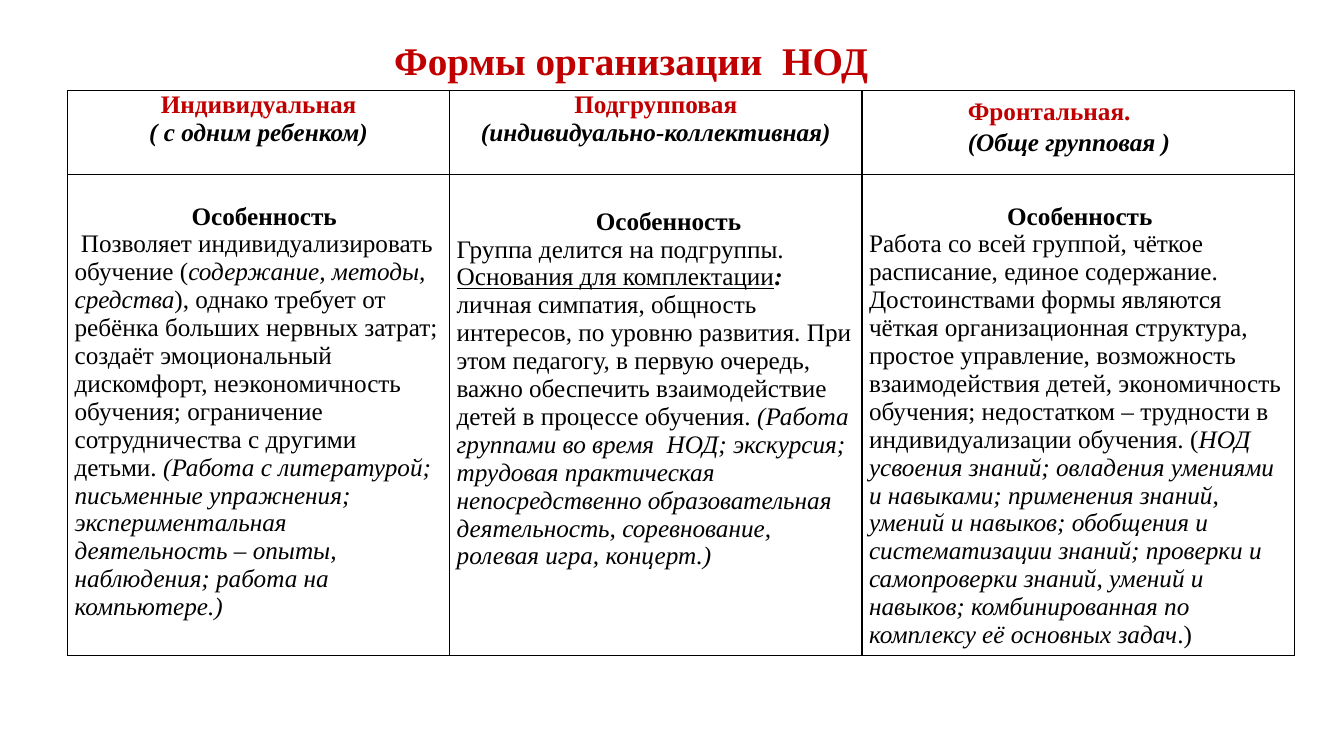
from lxml.etree import SubElement
from pptx import Presentation
from pptx.dml.color import RGBColor
from pptx.enum.text import MSO_ANCHOR, PP_ALIGN
from pptx.oxml.ns import qn
from pptx.util import Inches, Pt

RED, BLACK = "C00000", "000000"


def add_runs(paragraph, runs, size=18):
    """Each run is (text, style, color); style letters: b, i, u."""
    for text, style, color in runs:
        run = paragraph.add_run()
        run.text = text
        font = run.font
        font.name, font.size = "Times New Roman", Pt(size)
        font.bold, font.italic, font.underline = (key in style for key in "biu")
        font.color.rgb = RGBColor.from_string(color)


def border_cell(cell):
    properties = cell._tc.get_or_add_tcPr()
    for position, side in enumerate(("a:lnL", "a:lnR", "a:lnT", "a:lnB")):
        line = SubElement(properties, qn(side), w=str(Pt(1)))
        fill = SubElement(line, qn("a:solidFill"))
        SubElement(fill, qn("a:srgbClr"), val=BLACK)
        properties.insert(position, line)


presentation = Presentation()
presentation.slide_width, presentation.slide_height = Inches(13.33), Inches(7.5)
slide = presentation.slides.add_slide(presentation.slide_layouts[5])

# Title
title = slide.shapes.title
title.left, title.top = Inches(3.81), Inches(0.31)
title.width, title.height = Inches(4.95), Inches(0.57)
title.text_frame.word_wrap = False
title.text_frame.vertical_anchor = MSO_ANCHOR.TOP
heading = title.text_frame.paragraphs[0]
heading.alignment = PP_ALIGN.LEFT
add_runs(heading, [("Формы организации  НОД", "b", RED)], 28)

# Content: two header lines per form, the third one stands in its own box
headers = [
    ("Индивидуальная", "( с одним ребенком)"),
    ("Подгрупповая", "(индивидуально-коллективная)"),
]
frontal_header = ("Фронтальная.", "(Обще групповая )")

# Per form: top margin, indent of "Особенность", paragraphs of (text, style)
features = [
    (0.28, 1.16, [
        [("\u00a0Позволяет индивидуализировать обучение (", ""),
         ("содержание, методы, средства", "i"),
         ("), однако требует от ребёнка больших нервных затрат; создаёт "
          "эмоциональный дискомфорт, неэкономичность обучения; ограничение "
          "сотрудничества с другими детьми. ", ""),
         ("(Работа с литературой; письменные упражнения; экспериментальная "
          "деятельность – опыты, наблюдения; работа на компьютере.)", "i")],
    ]),
    (0.33, 1.38, [
        [("Группа делится на подгруппы.", "")],
        [("Основания для комплектации", "u"), (":", "bi"),
         (" личная симпатия, общность интересов, по уровню развития. При этом "
          "педагогу, в первую очередь, важно обеспечить взаимодействие детей "
          "в процессе обучения. ", ""),
         ("(Работа группами во время  НОД; экскурсия; трудовая практическая "
          "непосредственно образовательная деятельность, соревнование, "
          "ролевая игра, концерт.)", "i")],
    ]),
    (0.28, 1.37, [
        [("Работа со всей группой, чёткое расписание, единое содержание.", "")],
        [("Достоинствами формы являются чёткая организационная структура, "
          "простое управление, возможность взаимодействия детей, экономичность "
          "обучения; недостатком – трудности в индивидуализации обучения. (", ""),
         ("НОД усвоения знаний; овладения умениями и навыками; применения "
          "знаний, умений и навыков; обобщения и систематизации знаний; "
          "проверки и самопроверки знаний, умений и навыков; комбинированная "
          "по комплексу её основных задач", "i"),
         (".)", "")],
    ]),
]

# Table grid
forms = slide.shapes.add_table(
    2, 3, Inches(0.67), Inches(0.9), Inches(12.17), Inches(5.6)).table
for column, width in zip(forms.columns, (3.79, 4.09, 4.29)):
    column.width = Inches(width)
for row, height in zip(forms.rows, (0.83, 4.77)):
    row.height = Inches(height)
for cell in forms.iter_cells():
    cell.fill.background()
    cell.margin_left = cell.margin_right = Inches(0.07)
    cell.margin_top = cell.margin_bottom = 0
    border_cell(cell)

# Header row
for column, (name, note) in enumerate(headers):
    frame = forms.cell(0, column).text_frame
    for paragraph, run in ((frame.paragraphs[0], (name, "b", RED)),
                           (frame.add_paragraph(), (note, "bi", BLACK))):
        paragraph.alignment = PP_ALIGN.CENTER
        add_runs(paragraph, [run])

# Feature row
for column, (top, indent, paragraphs) in enumerate(features):
    cell = forms.cell(1, column)
    cell.margin_top = Inches(top)
    caption = cell.text_frame.paragraphs[0]
    caption._p.get_or_add_pPr().set("indent", str(Inches(indent)))
    add_runs(caption, [("Особенность", "b", BLACK)])
    for runs in paragraphs:
        add_runs(cell.text_frame.add_paragraph(),
                 [(text, style, BLACK) for text, style in runs])

# Header of the frontal form
frontal = slide.shapes.add_textbox(
    Inches(9.5), Inches(0.9), Inches(2.58), Inches(0.71)).text_frame
frontal.word_wrap = True
add_runs(frontal.paragraphs[0], [(frontal_header[0], "b", RED)])
add_runs(frontal.add_paragraph(), [(frontal_header[1], "bi", BLACK)])

presentation.save("out.pptx")
